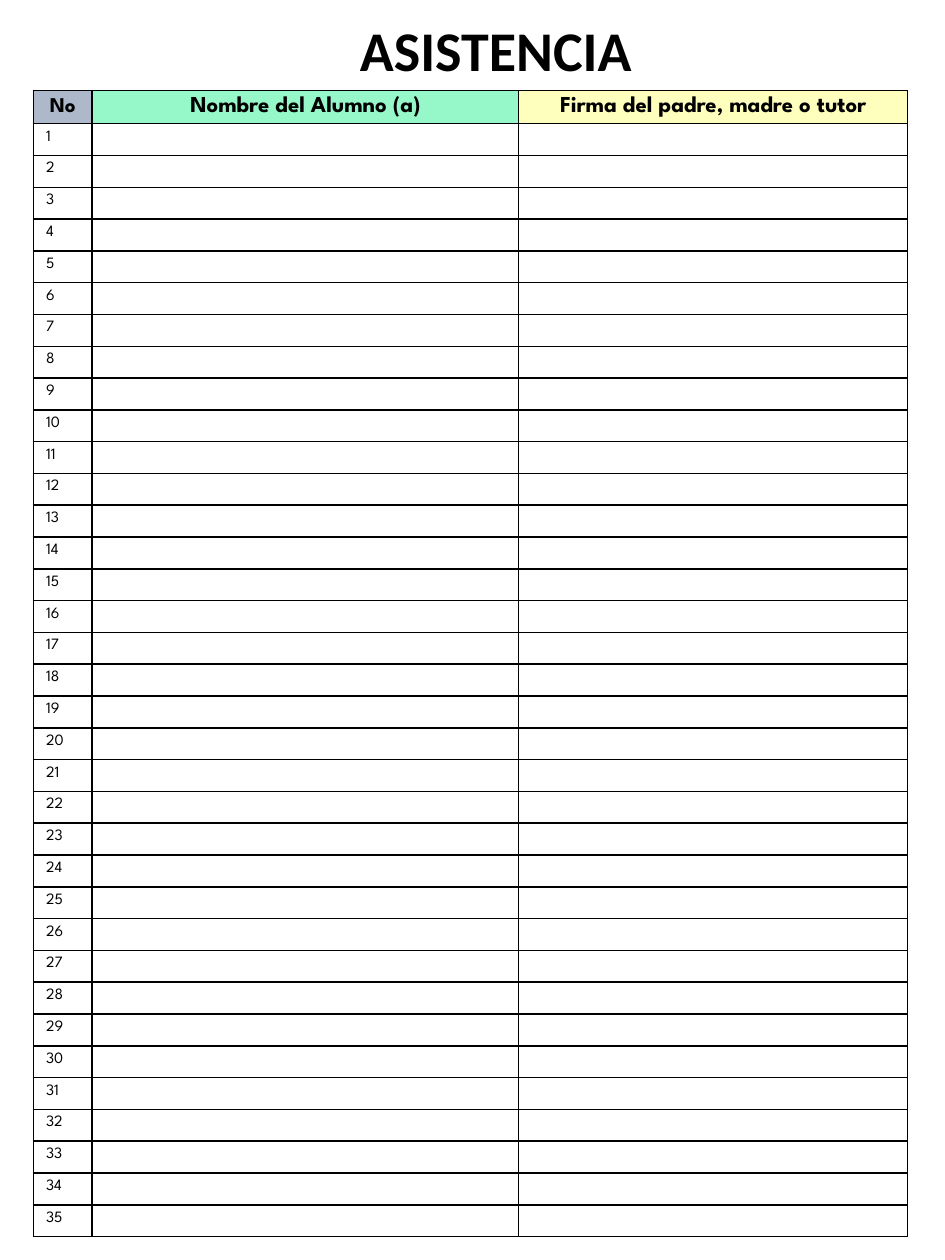
from lxml import etree
from pptx import Presentation
from pptx.dml import color
from pptx.enum import text
from pptx.oxml import ns
from pptx.util import Pt

HEADINGS = (
    ("No", 12, "ADB9CA", 33.5),
    ("Nombre del Alumno (a)", 13, "96F8C9", 243.7),
    ("Firma del padre, madre o tutor", 13, "FFFFBD", 222.4),
)
STUDENTS = 35
HEADING_HEIGHT = 18.9
STUDENT_HEIGHT = 18.19


def rgb(code):
    """Return the colour for a hex string."""
    return color.RGBColor.from_string(code)


def add_words(paragraph, words, size, font, bold):
    """Add one black run to a paragraph."""
    run = paragraph.add_run()
    run.text = words
    run.font.size = Pt(size)
    run.font.name = font
    run.font.bold = bold
    run.font.color.rgb = rgb("000000")


def add_borders(cell):
    """Draw a one-point black line on each side of a cell."""
    properties = cell._tc.get_or_add_tcPr()
    for position, side in enumerate(("a:lnL", "a:lnR", "a:lnT", "a:lnB")):
        line = etree.Element(ns.qn(side), w=str(Pt(1)))
        fill = etree.SubElement(line, ns.qn("a:solidFill"))
        etree.SubElement(fill, ns.qn("a:srgbClr"), val="000000")
        properties.insert(position, line)


def fill_cell(cell, words, size, background, heading=False):
    """Write, fill and border one cell of the register."""
    paragraph = cell.text_frame.paragraphs[0]
    if words:
        add_words(paragraph, words, size, "League Spartan", heading)
    else:
        etree.SubElement(paragraph._p, ns.qn("a:endParaRPr"), sz=str(size * 100))
    if heading:
        paragraph.alignment = text.PP_ALIGN.CENTER
        cell.vertical_anchor = text.MSO_ANCHOR.MIDDLE
        cell.margin_top = cell.margin_bottom = Pt(1.6)
    cell.fill.solid()
    cell.fill.fore_color.rgb = rgb(background)
    add_borders(cell)


def add_title(slide, words):
    """Place the title at the top of the sheet."""
    title = slide.shapes.title
    title.left, title.top, title.width, title.height = Pt(168.2), Pt(5.4), Pt(230.4), Pt(46)
    frame = title.text_frame
    frame.word_wrap = True
    frame.auto_size = text.MSO_AUTO_SIZE.SHAPE_TO_FIT_TEXT
    frame.vertical_anchor = text.MSO_ANCHOR.TOP
    paragraph = frame.paragraphs[0]
    paragraph.alignment = text.PP_ALIGN.CENTER
    add_words(paragraph, words, 32, "Calibri", True)


def add_register(slide):
    """Add the attendance table with one numbered row per student."""
    width = sum(heading[3] for heading in HEADINGS)
    height = HEADING_HEIGHT + STUDENTS * STUDENT_HEIGHT
    register = slide.shapes.add_table(
        STUDENTS + 1, len(HEADINGS), Pt(19.1), Pt(51.8), Pt(width), Pt(height)
    ).table
    register.first_row = False
    register.horz_banding = False
    for row in register.rows:
        row.height = Pt(STUDENT_HEIGHT)
    register.rows[0].height = Pt(HEADING_HEIGHT)
    for column, (words, size, background, column_width) in enumerate(HEADINGS):
        register.columns[column].width = Pt(column_width)
        fill_cell(register.cell(0, column), words, size, background, heading=True)
        for number in range(1, STUDENTS + 1):
            label = str(number) if column == 0 else ""
            fill_cell(register.cell(number, column), label, 9, "FFFFFF")


def main():
    """Build the attendance sheet."""
    deck = Presentation()
    deck.slide_width, deck.slide_height = Pt(540), Pt(720)
    slide = deck.slides.add_slide(deck.slide_layouts.get_by_name("Title Only"))
    add_register(slide)
    add_title(slide, "ASISTENCIA")
    deck.save("out.pptx")


if __name__ == "__main__":
    main()
